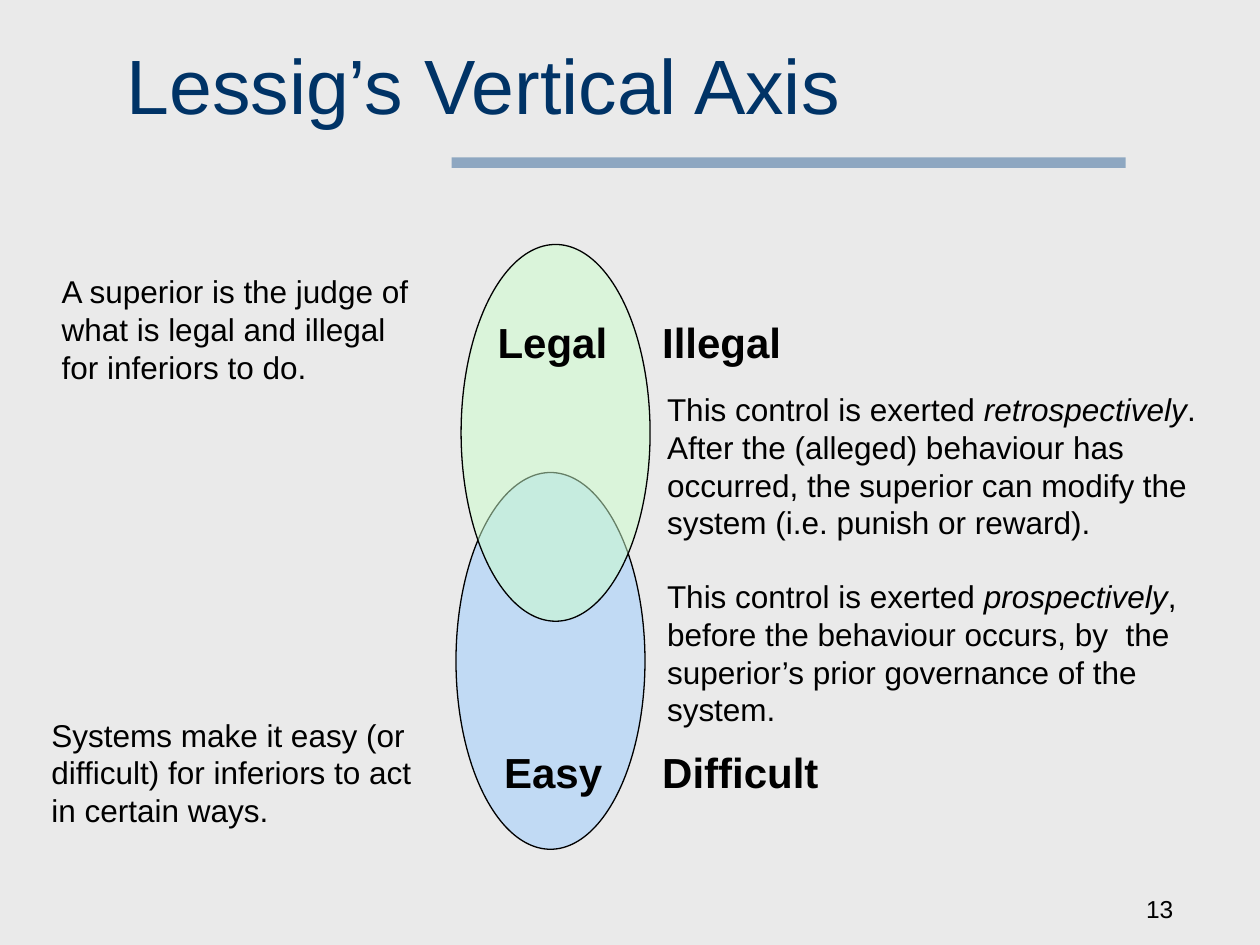
import pptx
import pptx.util
import pptx.dml.color
import pptx.enum.shapes
import pptx.enum.text
import pptx.oxml
import pptx.oxml.ns

Pt = pptx.util.Pt
RGBColor = pptx.dml.color.RGBColor
ALIGN = pptx.enum.text.PP_ALIGN
ANCHOR = pptx.enum.text.MSO_ANCHOR
FIT = pptx.enum.text.MSO_AUTO_SIZE
SHAPE = pptx.enum.shapes.MSO_SHAPE

PAPER = RGBColor(0xEA, 0xEA, 0xEA)
NAVY = RGBColor(0x00, 0x33, 0x66)
STEEL = RGBColor(0x33, 0x66, 0x99)
BLUE = RGBColor(0x99, 0xCC, 0xFF)
GREEN = RGBColor(0xCC, 0xFF, 0xCC)
BLACK = RGBColor(0x00, 0x00, 0x00)

# Content: places are left, top, width, height in points
TITLE = "Lessig’s Vertical Axis"
PAGE_NUMBER = "13"
OVAL_SIZE = (108, 215.3)
AXES = [  # oval corner, colour, inner label and place, outer label and place
    ((260.6, 270), BLUE, "Easy", (280.8, 423, 70.6, 36),
     "Difficult", (371.3, 423, 104, 36)),
    ((263.5, 139.7), GREEN, "Legal", (277.2, 177.1, 77, 36),
     "Illegal", (371.3, 177.1, 83, 36)),
]
# Every second span of a note is italic
NOTES = [
    (["Systems make it easy (or difficult) for inferiors to act in certain ways."],
     (22.3, 405.4, 236.2, 72.7)),
    (["A superior is the judge of what is legal and illegal for inferiors to do."],
     (28.1, 151.9, 219.6, 72.7)),
    (["This control is exerted ", "retrospectively",
      ". After the (alleged) behaviour has occurred, the superior can modify "
      "the system (i.e. punish or reward)."], (374.1, 219.3, 323.3, 94.3)),
    (["This control is exerted ", "prospectively",
      ", before the behaviour occurs, by  the superior’s prior governance of "
      "the system."], (374.1, 326.2, 323.3, 94.3)),
]

deck = pptx.Presentation()
deck.slide_width, deck.slide_height = Pt(720), Pt(540)
page = deck.slides.add_slide(deck.slide_layouts[6])
page.background.fill.solid()
page.background.fill.fore_color.rgb = PAPER


def add_text(spans, place, size=18, color=BLACK, bold=False, wrap=True,
             align=ALIGN.LEFT, anchor=ANCHOR.TOP):
    box = page.shapes.add_textbox(*map(Pt, place))
    frame = box.text_frame
    frame.word_wrap = wrap
    frame.auto_size = FIT.NONE if wrap else FIT.SHAPE_TO_FIT_TEXT
    frame.vertical_anchor = anchor
    para = frame.paragraphs[0]
    para.alignment = align
    for index, words in enumerate(spans):
        span = para.add_run()
        span.text = words
        span.font.name = "Arial"
        span.font.size = Pt(size)
        span.font.bold = bold
        span.font.italic = index % 2 == 1
        span.font.color.rgb = color


def add_glass(kind, place, color, outlined):
    """Add a half-transparent shape."""
    shape = page.shapes.add_shape(kind, *map(Pt, place))
    shape.shadow.inherit = False
    shape.fill.solid()
    shape.fill.fore_color.rgb = color
    tint = shape.fill._xPr.find(".//" + pptx.oxml.ns.qn("a:srgbClr"))
    tint.append(pptx.oxml.parse_xml(
        f'<a:alpha {pptx.oxml.ns.nsdecls("a")} val="50000"/>'))
    if outlined:
        shape.line.color.rgb = BLACK
        shape.line.width = Pt(0.75)
    else:
        shape.line.fill.background()


# Title and its rule
add_glass(SHAPE.RECTANGLE, (258, 90, 385.2, 6), STEEL, outlined=False)
add_text([TITLE], (65.2, 14.6, 615.6, 66.2), size=44, color=NAVY,
         anchor=ANCHOR.MIDDLE)

# Overlapping ovals with their labels
for corner, color, inner, inner_place, outer, outer_place in AXES:
    add_glass(SHAPE.OVAL, corner + OVAL_SIZE, color, outlined=True)
    add_text([inner], inner_place, size=24, bold=True, wrap=False,
             align=ALIGN.CENTER)
    add_text([outer], outer_place, size=24, bold=True, wrap=False)

# Notes beside the ovals
for spans, place in NOTES:
    add_text(spans, place)

# Page number
add_text([PAGE_NUMBER], (527.8, 495.4, 149.8, 36), size=14,
         align=ALIGN.RIGHT, anchor=ANCHOR.BOTTOM)

deck.save("out.pptx")
